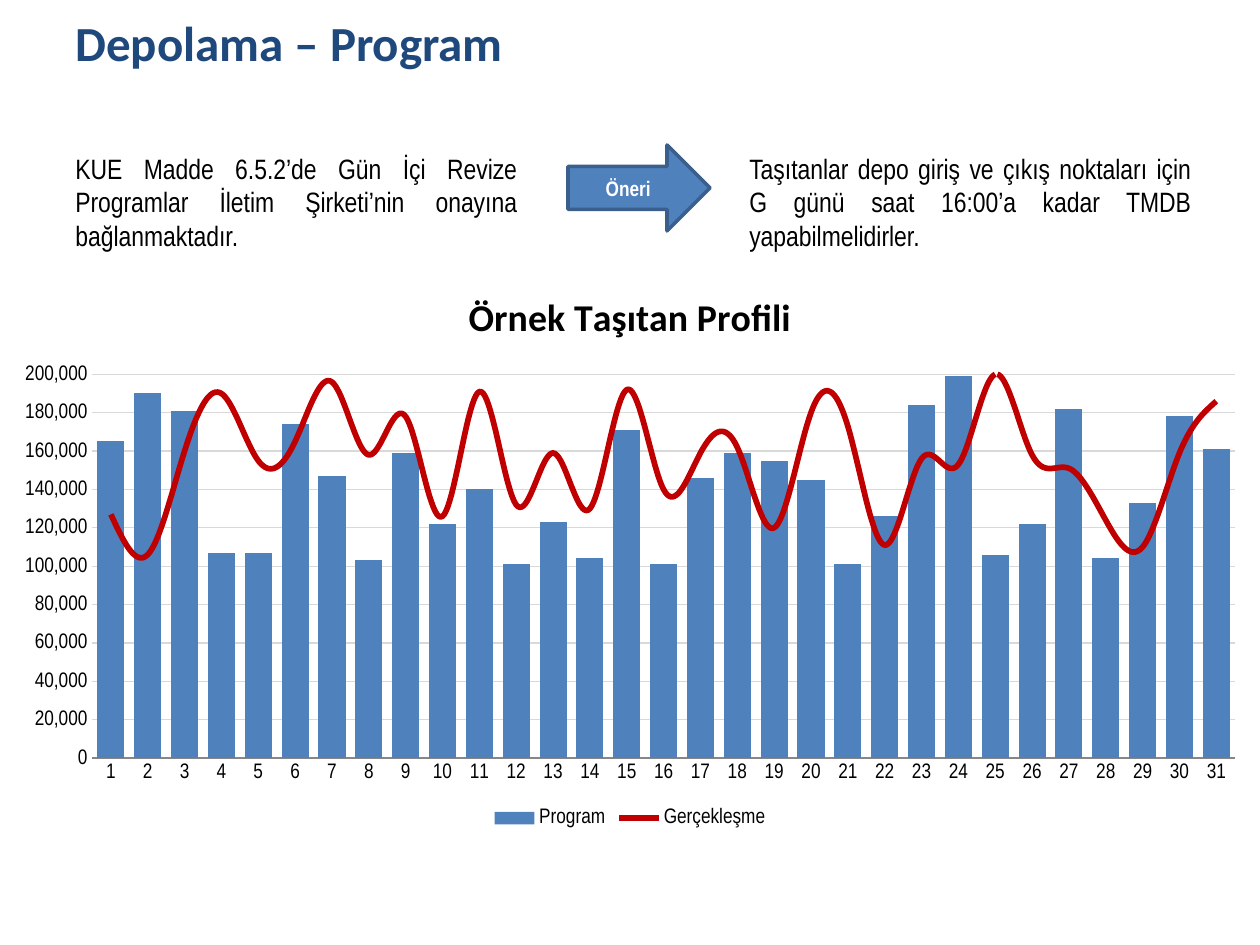
import copy
import pptx
import pptx.util
import pptx.chart.data
import pptx.dml.color
import pptx.enum.chart
import pptx.enum.shapes
import pptx.enum.text
import pptx.oxml

THEME = {
    "head": {"name": "Calibri", "size": 28, "bold": True, "color": "1F497D"},
    "body": {"name": "Arial Narrow", "size": 16, "bold": False, "color": "000000"},
    "tag": {"name": "Arial Narrow", "size": 12, "bold": True, "color": "FFFFFF"},
    "name": {"name": "Calibri", "size": 21.6, "bold": True, "color": "000000"},
    "axis": {"name": "Arial Narrow", "size": 12, "bold": False, "color": "000000"},
    "bar": "4F81BD",
    "edge": "3A5F8C",
    "line": "C00000",
    "grid": "D9D9D9",
    "base": "868686",
}
SCALE = 914400 / 126
RGB = pptx.dml.color.RGBColor.from_string
ALIGN = pptx.enum.text.PP_ALIGN
TICK = pptx.enum.chart.XL_TICK_MARK


def px(*nums):
    return [pptx.util.Emu(round(num * SCALE)) for num in nums]


def style(font, look):
    vals = dict(look, size=pptx.util.Pt(look["size"]))
    font.color.rgb = RGB(vals.pop("color"))
    for key, val in vals.items():
        setattr(font, key, val)


deck = pptx.Presentation()
deck.slide_width, deck.slide_height = px(1260, 945)
slide = deck.slides.add_slide(deck.slide_layouts[6])

days = range(1, 32)
plan = [165, 190, 181, 107, 107, 174, 147, 103, 159, 122, 140, 101, 123, 104, 171, 101,
        146, 159, 155, 145, 101, 126, 184, 199, 106, 122, 182, 104, 133, 178, 161]
real = [127, 106, 160, 190, 155, 165, 196, 158, 178, 126, 191, 132, 159, 130, 192, 140,
        159, 162, 120, 180, 173, 111, 156, 153, 200, 158, 151, 124, 110, 159, 186]
data = pptx.chart.data.CategoryChartData(number_format="#,##0")
data.categories = [str(day) for day in days]
for name, vals in (("Program", plan), ("Gerçekleşme", real)):
    data.add_series(name, [val * 1000 for val in vals])
chart = slide.shapes.add_chart(
    pptx.enum.chart.XL_CHART_TYPE.COLUMN_STACKED, *px(0, 265, 1260, 568), data).chart
style(chart.font, THEME["axis"])

chart.has_title = True
title = chart.chart_title
title.include_in_layout = False
title.text_frame.text = "Örnek Taşıtan Profili"
style(title.text_frame.paragraphs[0].runs[0].font, THEME["name"])

chart.has_legend = True
chart.legend.position = pptx.enum.chart.XL_LEGEND_POSITION.BOTTOM
chart.legend.include_in_layout = False
style(chart.legend.font, THEME["axis"])

cat, val = chart.category_axis, chart.value_axis
for axis in (cat, val):
    axis.major_tick_mark = axis.minor_tick_mark = TICK.NONE
    style(axis.tick_labels.font, THEME["axis"])
cat.format.line.color.rgb = RGB(THEME["base"])
for key, num in {"minimum_scale": 0, "maximum_scale": 200000, "major_unit": 20000}.items():
    setattr(val, key, num)
val.tick_labels.number_format = "#,##0"
val.tick_labels.number_format_is_linked = False
val.format.line.fill.background()
grid = val.major_gridlines.format.line
grid.color.rgb = RGB(THEME["grid"])
grid.width = pptx.util.Pt(0.75)

bars = chart.plots[0]
for key, num in {"gap_width": 36, "overlap": 100, "vary_by_categories": False}.items():
    setattr(bars, key, num)
fill = bars.series[0].format.fill
fill.solid()
fill.fore_color.rgb = RGB(THEME["bar"])

ns = "{http://schemas.openxmlformats.org/drawingml/2006/chart}"
ser = bars.series[1].format.line and chart.element.findall(f".//{ns}ser")[1]
bar = ser.getparent()
group = pptx.oxml.parse_xml(
    '<c:lineChart xmlns:c="http://schemas.openxmlformats.org/drawingml/2006/chart">'
    '<c:grouping val="standard"/><c:varyColors val="0"/><c:marker val="1"/></c:lineChart>')
for flag in ser.findall(f"{ns}invertIfNegative"):
    ser.remove(flag)
group.insert(2, ser)
for ref in bar.findall(f"{ns}axId"):
    group.append(copy.deepcopy(ref))
bar.addnext(group)

curve = chart.plots[1].series[0]
curve.smooth = True
curve.marker.style = pptx.enum.chart.XL_MARKER_STYLE.NONE
curve.format.line.color.rgb = RGB(THEME["line"])
curve.format.line.width = pptx.util.Pt(3.25)

arrow = slide.shapes.add_shape(
    pptx.enum.shapes.MSO_SHAPE.RIGHT_ARROW, *px(568, 145, 142, 86))
arrow.shadow.inherit = False
arrow.fill.solid()
arrow.fill.fore_color.rgb = RGB(THEME["bar"])
arrow.line.color.rgb = RGB(THEME["edge"])
arrow.line.width = pptx.util.Pt(2)

left = "KUE Madde 6.5.2’de Gün İçi Revize Programlar İletim Şirketi’nin onayına bağlanmaktadır."
right = "Taşıtanlar depo giriş ve çıkış noktaları için G günü saat 16:00’a kadar TMDB yapabilmelidirler."
head, note, hint = [slide.shapes.add_textbox(*px(*box)) for box in (
    (63, 6, 1134, 158), (63, 145, 467, 115), (737, 145, 467, 115))]
for shape, text, look, align in (
        (head, "Depolama – Program", "head", ALIGN.LEFT),
        (note, left, "body", ALIGN.JUSTIFY),
        (arrow, "Öneri", "tag", ALIGN.CENTER),
        (hint, right, "body", ALIGN.JUSTIFY)):
    frame = shape.text_frame
    frame.word_wrap = True
    frame.text = text
    para = frame.paragraphs[0]
    para.alignment = align
    style(para.runs[0].font, THEME[look])

deck.save("out.pptx")
